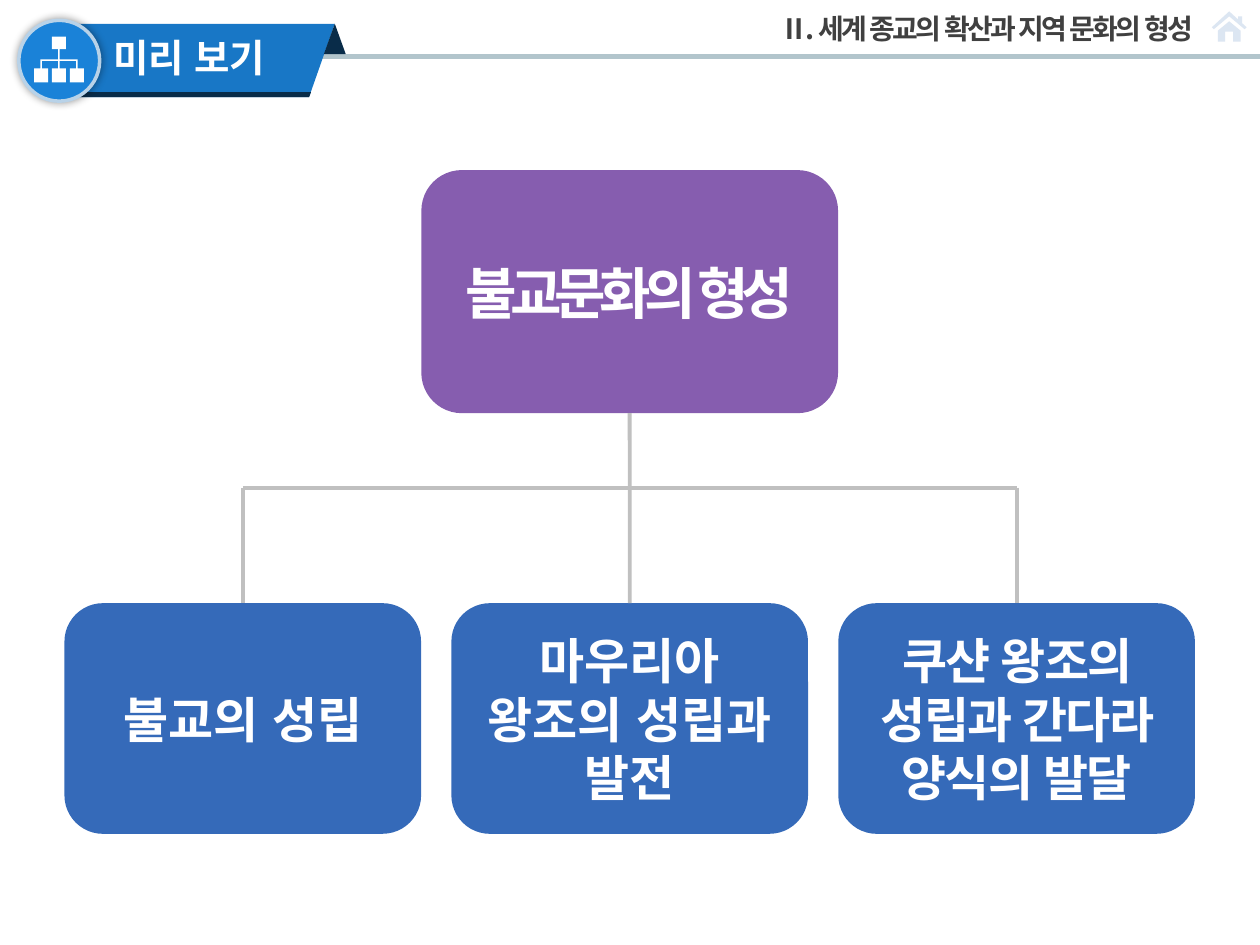
from lxml.etree import SubElement
from pptx import Presentation
from pptx.dml.color import RGBColor
from pptx.enum.lang import MSO_LANGUAGE_ID
from pptx.enum.shapes import MSO_CONNECTOR, MSO_SHAPE
from pptx.enum.text import MSO_ANCHOR, PP_ALIGN
from pptx.oxml.ns import qn
from pptx.util import Cm, Pt

FONT = "Noto Sans CJK KR"
COLORS = {
    "white": "FFFFFF", "heading": "404040", "house": "DCE6F2", "rule": "B2C5CC",
    "tab": "1877C6", "fold": "092C49", "badge": "1A82D8", "ring": "B8D2E8",
    "branch": "C0C0C0", "root": "865DAF", "topic": "356AB9", "shadow": "000000",
}


def color(name):
    return RGBColor.from_string(COLORS[name])


def paint(shape, fill):
    shape.shadow.inherit = False
    shape.fill.solid()
    shape.fill.fore_color.rgb = color(fill)
    shape.line.fill.background()
    return shape


def add_block(slide, kind, box, fill):
    return paint(slide.shapes.add_shape(kind, *map(Cm, box)), fill)


def add_outline(slide, left, top, contours, fill):
    builder = None
    for contour in contours:
        points = [(Cm(left + x), Cm(top + y)) for x, y in contour]
        if builder is None:
            builder = slide.shapes.build_freeform(*points[0], scale=1.0)
        else:
            builder.move_to(*points[0])
        builder.add_line_segments(points[1:], close=True)
    return paint(builder.convert_to_shape(), fill)


def rectangle_points(left, top, width, height):
    right, bottom = left + width, top + height
    return [(left, top), (right, top), (right, bottom), (left, bottom)]


def write(shape, text, size, fill="white", align=PP_ALIGN.CENTER, spacing=0):
    frame = shape.text_frame
    frame.word_wrap = True
    frame.vertical_anchor = MSO_ANCHOR.MIDDLE
    frame.text = text
    paragraph = frame.paragraphs[0]
    paragraph.alignment = align
    run = paragraph.runs[0]
    font = run.font
    font.name, font.size, font.bold = FONT, Pt(size), True
    font.color.rgb = color(fill)
    font.language_id = MSO_LANGUAGE_ID.KOREAN
    properties = font._element
    SubElement(properties, qn("a:ea")).set("typeface", FONT)
    if spacing:
        properties.set("spc", str(int(spacing * 100)))
    return paragraph


def add_label(slide, box, insets, *args, **options):
    label = slide.shapes.add_textbox(*map(Cm, box))
    paragraph = write(label, *args, **options)
    frame = label.text_frame
    frame.margin_left, frame.margin_right = map(Cm, insets)
    frame.margin_top = frame.margin_bottom = 0
    return paragraph


def add_house(slide, left, top):
    roof = [(0.35, 0), (0.7, 0.32), (0.66, 0.36), (0.35, 0.1), (0.04, 0.36), (0, 0.32)]
    body = [(0.35, 0.2), (0.58, 0.39), (0.58, 0.61), (0.43, 0.61), (0.43, 0.41),
            (0.27, 0.41), (0.27, 0.61), (0.12, 0.61), (0.12, 0.39)]
    for contour in (roof, body):
        add_outline(slide, left, top, [contour], "house")
    add_block(slide, MSO_SHAPE.RECTANGLE, (left + 0.53, top + 0.1, 0.08, 0.15), "house")


def add_header(slide, left, top, width, height):
    add_block(slide, MSO_SHAPE.RECTANGLE, (left, top, width, height), "white")
    heading = add_label(slide, (left + 14.88, top, 9.37, 1.07), (0, 0.2),
                        "Ⅱ. 세계 종교의 확산과 지역 문화의 형성", 16, "heading",
                        PP_ALIGN.RIGHT, -1.5)
    heading.line_spacing = 1.1
    add_house(slide, left + 24.43, top + 0.23)
    add_block(slide, MSO_SHAPE.RECTANGLE, (left + 1, top + 1.09, width - 1, 0.1), "rule")


def add_tree_icon(slide, left, top):
    node, stroke, step = 0.28, 0.03, 0.36
    bar_top, child_top = 0.46, 0.64
    middle = (node - stroke) / 2
    contours = [
        rectangle_points(step, 0, node, 0.25),
        rectangle_points(step + middle, 0.25, stroke, bar_top - 0.25),
        rectangle_points(middle, bar_top, 2 * step + stroke, stroke),
    ]
    for index in range(3):
        drop_top = bar_top + stroke
        contours.append(rectangle_points(index * step + middle, drop_top, stroke,
                                         child_top - drop_top))
        contours.append(rectangle_points(index * step, child_top, node, node))
    add_outline(slide, left, top, contours, "white")


def add_badge(slide, left, top, size):
    badge = add_block(slide, MSO_SHAPE.OVAL, (left, top, size, size), "badge")
    badge.line.color.rgb = color("ring")
    badge.line.width = Pt(2)
    effects = badge._element.spPr.find(qn("a:effectLst"))
    shadow = SubElement(effects, qn("a:outerShdw"), blurRad=str(Pt(5)), dist="0",
                        dir="0", algn="ctr", rotWithShape="0")
    tint = SubElement(shadow, qn("a:srgbClr"), val=COLORS["shadow"])
    SubElement(tint, qn("a:alpha"), val="40000")
    add_tree_icon(slide, left + 0.31, top + 0.33)


def add_title_tab(slide, left, top):
    banner_left, banner_top = left + 0.97, top + 0.07
    banner = [(0, 0), (5.4, 0), (4.88, 1.48), (0, 1.48)]
    edge = [(0, 1.38), (4.92, 1.38), (4.88, 1.48), (0, 1.48)]
    fold = [(5.4, 0), (5.62, 0.61), (5.18, 0.61)]
    for contour, fill in ((banner, "tab"), (edge, "fold"), (fold, "fold")):
        add_outline(slide, banner_left, banner_top, [contour], fill)
    add_label(slide, (left + 1.65, top + 0.15, 4.22, 1.19), (0.25, 0.25),
              "미리 보기", 22, align=PP_ALIGN.LEFT)
    add_badge(slide, left, top, 1.63)


def add_branch(slide, start, end, upper=None, lower=None):
    branch = slide.shapes.add_connector(MSO_CONNECTOR.STRAIGHT, *start, *end)
    if upper is not None:
        branch.begin_connect(upper, 2)
    if lower is not None:
        branch.end_connect(lower, 0)
    branch.line.color.rgb = color("branch")
    branch.line.width = Pt(2.25)
    SubElement(branch._element.spPr, qn("a:effectLst"))


def add_topic_tree(slide, left, top, width, height):
    root_width, root_height = 8.4, 4.9
    topic_width, topic_height = 7.19, 4.65
    bar_top = Cm(top + 6.4)
    topic_top = top + height - topic_height
    step = (width - topic_width) / 2

    root_box = (left + (width - root_width) / 2, top, root_width, root_height)
    root = add_block(slide, MSO_SHAPE.ROUNDED_RECTANGLE, root_box, "root")
    write(root, "불교문화의 형성", 32, spacing=-4)

    topics = []
    for index, (text, spacing) in enumerate((
        ("불교의 성립", 0),
        ("마우리아 왕조의 성립과 발전", 0),
        ("쿠샨 왕조의 성립과 간다라 양식의 발달", -1),
    )):
        box = (left + index * step, topic_top, topic_width, topic_height)
        topic = add_block(slide, MSO_SHAPE.ROUNDED_RECTANGLE, box, "topic")
        write(topic, text, 28, spacing=spacing)
        topics.append(topic)

    centers = [topic.left + topic.width // 2 for topic in topics]
    add_branch(slide, (centers[0], bar_top), (centers[2], bar_top))
    for index, (center, topic) in enumerate(zip(centers, topics)):
        add_branch(slide, (center, bar_top), (center, topic.top),
                   root if index == 1 else None, topic)


def main():
    presentation = Presentation()
    presentation.slide_width, presentation.slide_height = Cm(25.4), Cm(19.05)
    slide = presentation.slides.add_slide(presentation.slide_layouts[6])
    add_header(slide, 0, 0, 25.4, 1.17)
    add_title_tab(slide, 0.38, 0.41)
    add_topic_tree(slide, 1.3, 3.43, 22.79, 13.38)
    presentation.save("out.pptx")


if __name__ == "__main__":
    main()
